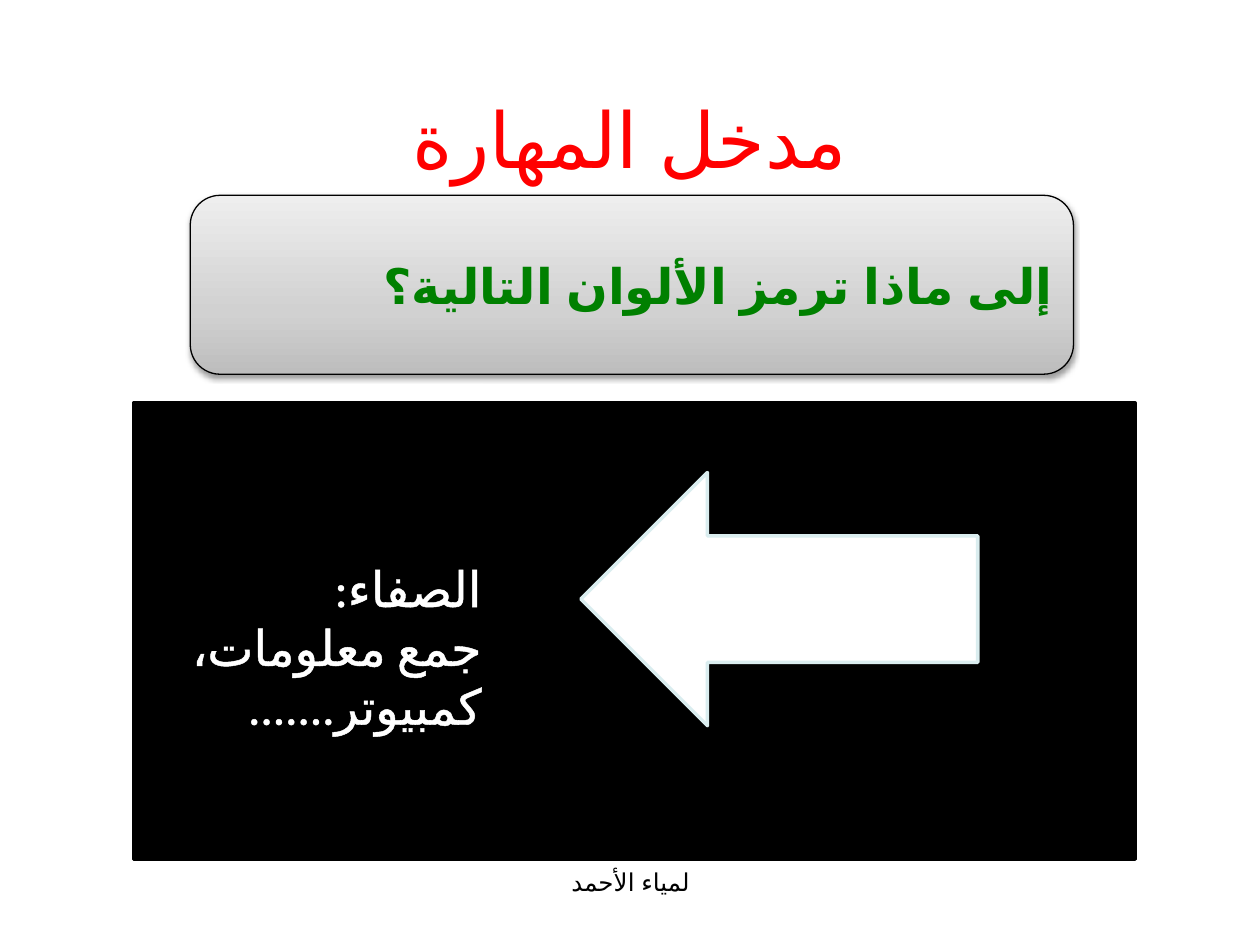
from copy import deepcopy

from lxml import etree
from pptx import Presentation
from pptx import util as u
from pptx.dml.color import RGBColor
from pptx.enum import shapes, text
from pptx.oxml import ns

COLORS = {
    "title": "FF0000", "question": "008000", "dark": "000000", "light": "FFFFFF",
    "arrow_edge": "DAEDEF", "low": "BDBDBD", "middle": "D1D1D1", "high": "EEEEEE",
}
LEFT, CENTER, RIGHT = text.PP_ALIGN.LEFT, text.PP_ALIGN.CENTER, text.PP_ALIGN.RIGHT
TOP, MIDDLE = text.MSO_ANCHOR.TOP, text.MSO_ANCHOR.MIDDLE


def rgb(name):
    return RGBColor.from_string(COLORS[name])


def inches(box):
    return [u.Inches(length) for length in box]


def add_node(parent, tag, **attributes):
    return etree.SubElement(parent, ns.qn(tag), attributes)


def write(shape, words, size, color, align, anchor=TOP, font="Arial", bold=False):
    frame = shape.text_frame
    frame.text = words
    frame.word_wrap = True
    frame.vertical_anchor = anchor
    for paragraph in frame.paragraphs:
        paragraph.alignment = align
        paragraph._p.get_or_add_pPr().set("rtl", "1")
        for run in paragraph.runs:
            run.font.size = u.Pt(size)
            run.font.name = font
            run.font.bold = bold
            run.font.color.rgb = rgb(color)
            properties = run._r.get_or_add_rPr()
            properties.set("lang", "ar-SA")
            add_node(properties, "a:cs", typeface=font)


def add_block(slide, kind, box, line, width, fill=None):
    block = slide.shapes.add_shape(kind, *inches(box))
    block.shadow.inherit = False
    block.line.color.rgb = rgb(line)
    block.line.width = u.Pt(width)
    if fill:
        block.fill.solid()
        block.fill.fore_color.rgb = rgb(fill)
    return block


def add_title(slide, box):
    title = slide.shapes.title
    title.left, title.top, title.width, title.height = inches(box)
    write(title, "مدخل المهارة", 44, "title", CENTER)


def shade(block):
    block.fill.gradient()
    block.fill.gradient_angle = 90
    stops = block.fill._fill._gradFill.gsLst
    stops.append(deepcopy(stops[-1]))
    tones = zip(block.fill.gradient_stops, (0, 0.35, 1), ("low", "middle", "high"))
    for stop, position, tone in tones:
        stop.position = position
        stop.color.rgb = rgb(tone)


def drop_shadow(block):
    effects = block._element.spPr.find(ns.qn("a:effectLst"))
    shadow = add_node(effects, "a:outerShdw", blurRad=str(u.Pt(3.1)),
                      dist=str(u.Pt(1.6)), dir="5400000", rotWithShape="0")
    tint = add_node(shadow, "a:srgbClr", val=COLORS["dark"])
    add_node(tint, "a:alpha", val="38000")


def add_question(slide, box):
    question = add_block(slide, shapes.MSO_SHAPE.ROUNDED_RECTANGLE, box, "dark", 0.75)
    shade(question)
    drop_shadow(question)
    write(question, "إلى ماذا ترمز الألوان التالية؟", 28, "question", RIGHT, MIDDLE, bold=True)


def outline(run, color, width):
    line = etree.Element(ns.qn("a:ln"), w=str(u.Pt(width)))
    add_node(add_node(line, "a:solidFill"), "a:srgbClr", val=COLORS[color])
    run._r.get_or_add_rPr().insert(0, line)


def add_answer(slide, box):
    answer = slide.shapes.add_textbox(*inches(box))
    write(answer, "الصفاء:\nجمع معلومات، كمبيوتر.......", 28, "light", RIGHT, font="Calibri")
    answer.text_frame.auto_size = text.MSO_AUTO_SIZE.SHAPE_TO_FIT_TEXT
    for paragraph in answer.text_frame.paragraphs:
        for run in paragraph.runs:
            outline(run, "light", 1.45)


def add_panel(slide, box):
    left, top = box[:2]
    add_block(slide, shapes.MSO_SHAPE.RECTANGLE, box, "dark", 2, "dark")
    arrow = add_block(slide, shapes.MSO_SHAPE.DOWN_ARROW,
                      (left + 4.12, top - 0.02, 2.01, 3.15), "arrow_edge", 2, "light")
    arrow.rotation = 90
    add_answer(slide, (left - 0.31, top + 1.18, 3.17, 1.51))


def add_author(slide, box):
    author = slide.shapes.add_textbox(*inches(box))
    write(author, "لمياء الأحمد", 14, "dark", CENTER)


def main():
    deck = Presentation()
    deck.slide_width, deck.slide_height = u.Inches(10), u.Inches(7.5)
    slide = deck.slides.add_slide(deck.slide_layouts[5])
    add_title(slide, (0.75, 0.68, 8.5, 2.8))
    add_question(slide, (1.51, 1.55, 7.01, 1.42))
    add_panel(slide, (1.06, 3.2, 7.95, 3.62))
    add_author(slide, (3.42, 6.83, 3.17, 0.52))
    deck.save("out.pptx")


if __name__ == "__main__":
    main()
